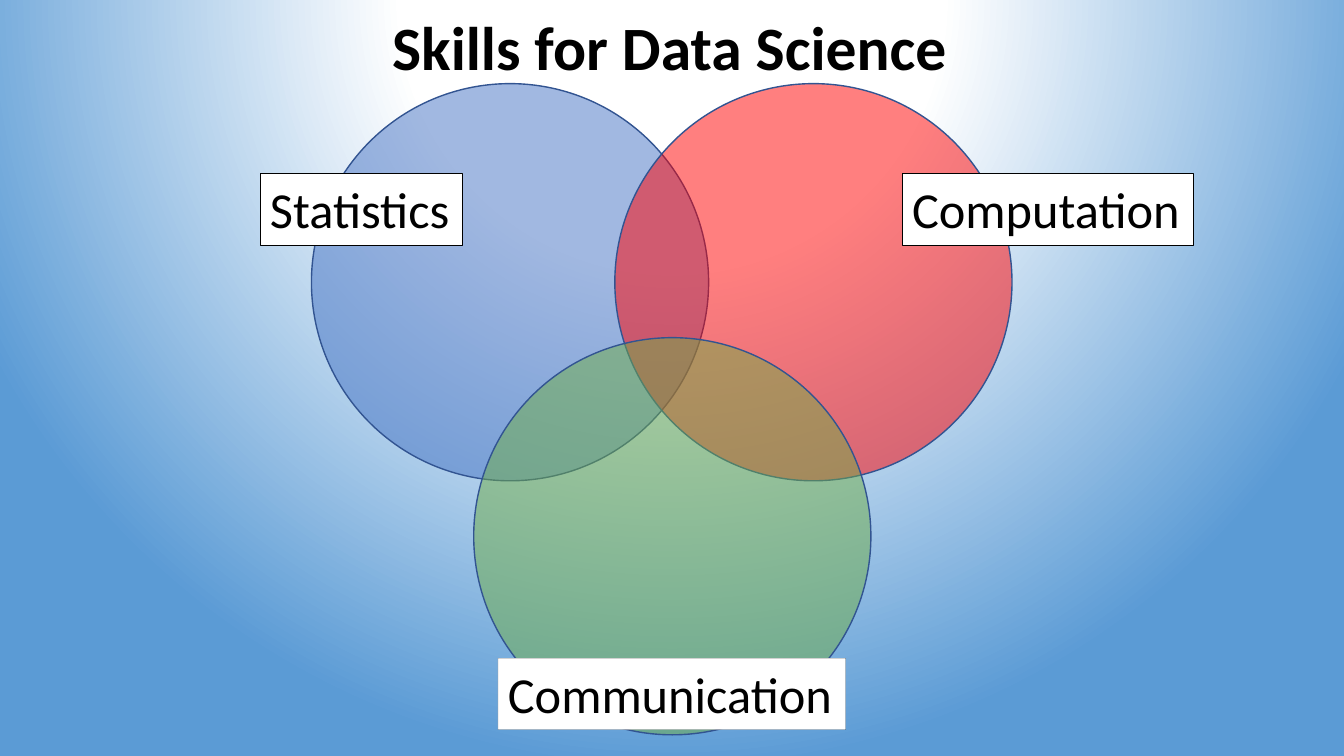
import pptx
import pptx.dml.color
import pptx.enum.shapes
import pptx.enum.text
import pptx.oxml
import pptx.oxml.ns
import pptx.util

RGBColor = pptx.dml.color.RGBColor
BLACK = RGBColor(0x00, 0x00, 0x00)
WHITE = RGBColor(0xFF, 0xFF, 0xFF)
SKY = RGBColor(0x5B, 0x9B, 0xD5)
OUTLINE = RGBColor(0x32, 0x54, 0x91)
BLUE = RGBColor(0x44, 0x72, 0xC4)
RED = RGBColor(0xFF, 0x00, 0x00)
GREEN = RGBColor(0x70, 0xAD, 0x47)

COLUMNS, ROWS = 80, 45  # square cells, six to the inch
CELL = pptx.util.Inches(1) / 6
DIAMETER = 23.64
LABEL_HEIGHT = 4.26


def cells(*counts):
    return [round(count * CELL) for count in counts]


def make_half_transparent(fill):
    """Set 50% alpha on the solid colour inside an XML element."""
    color = fill.find(".//" + pptx.oxml.ns.qn("a:srgbClr"))
    color.append(pptx.oxml.parse_xml(
        f'<a:alpha {pptx.oxml.ns.nsdecls("a")} val="50000"/>'))


class VennSlide:
    font = "Calibri"

    def __init__(self, deck):
        self.slide = deck.slides.add_slide(deck.slide_layouts[5])
        self.circles = None

    def background(self, stops):
        stop_xml = "".join(
            f'<a:gs pos="{share * 1000}"><a:srgbClr val="{color}"/></a:gs>'
            for share, color in stops)
        gradient = pptx.oxml.parse_xml(
            f'<a:gradFill {pptx.oxml.ns.nsdecls("a")} rotWithShape="1">'
            f'<a:gsLst>{stop_xml}</a:gsLst><a:path path="circle">'
            '<a:fillToRect l="50000" t="-80000" r="50000" b="180000"/>'
            '</a:path></a:gradFill>')
        self.slide.background.fill.gradient()
        default_gradient = self.slide.element.find(
            ".//" + pptx.oxml.ns.qn("a:gradFill"))
        default_gradient.getparent().replace(default_gradient, gradient)

    def set_text(self, frame, text, size, bold=False):
        frame.text = text
        frame.word_wrap = False
        frame.auto_size = pptx.enum.text.MSO_AUTO_SIZE.SHAPE_TO_FIT_TEXT
        frame.vertical_anchor = pptx.enum.text.MSO_ANCHOR.TOP
        paragraph = frame.paragraphs[0]
        paragraph.alignment = pptx.enum.text.PP_ALIGN.LEFT
        paragraph.font.name = self.font
        paragraph.font.size = pptx.util.Pt(size)
        paragraph.font.bold = bold
        paragraph.font.color.rgb = BLACK

    def title(self, text, left, top, width, height):
        heading = self.slide.shapes.title
        heading.left, heading.top, heading.width, heading.height = cells(
            left, top, width, height)
        self.set_text(heading.text_frame, text, 44, bold=True)

    def circle(self, color, left, top):
        if self.circles is None:
            self.circles = self.slide.shapes.add_group_shape()
        skill = self.circles.shapes.add_shape(
            pptx.enum.shapes.MSO_SHAPE.OVAL,
            *cells(left, top, DIAMETER, DIAMETER))
        skill.shadow.inherit = False
        skill.fill.solid()
        skill.fill.fore_color.rgb = color
        make_half_transparent(skill.element.spPr)
        skill.line.color.rgb = OUTLINE
        skill.line.width = pptx.util.Pt(1)

    def label(self, text, left, top, width, faint_border=False):
        tag = self.slide.shapes.add_textbox(
            *cells(left, top, width, LABEL_HEIGHT))
        tag.fill.solid()
        tag.fill.fore_color.rgb = WHITE
        tag.line.color.rgb = BLACK
        tag.line.width = pptx.util.Pt(0.25)
        if faint_border:
            make_half_transparent(tag.element.spPr.find(pptx.oxml.ns.qn("a:ln")))
        self.set_text(tag.text_frame, text, 36)


def main():
    deck = pptx.Presentation()
    deck.slide_width, deck.slide_height = cells(COLUMNS, ROWS)
    venn = VennSlide(deck)

    # Background and title
    venn.background([(0, WHITE), (35, WHITE), (100, SKY)])
    venn.title("Skills for Data Science", 22.74, 0.24, 34.5, 5.04)

    # Overlapping skills
    for color, left, top in [(BLUE, 18.54, 4.98), (RED, 36.6, 4.98),
                             (GREEN, 28.2, 20.1)]:
        venn.circle(color, left, top)

    # Skill names
    venn.label("Statistics", 15.48, 10.32, 12.06)
    venn.label("Computation", 53.7, 10.32, 17.34)
    venn.label("Communication", 29.64, 39.18, 20.7, faint_border=True)

    deck.save("out.pptx")


if __name__ == "__main__":
    main()
